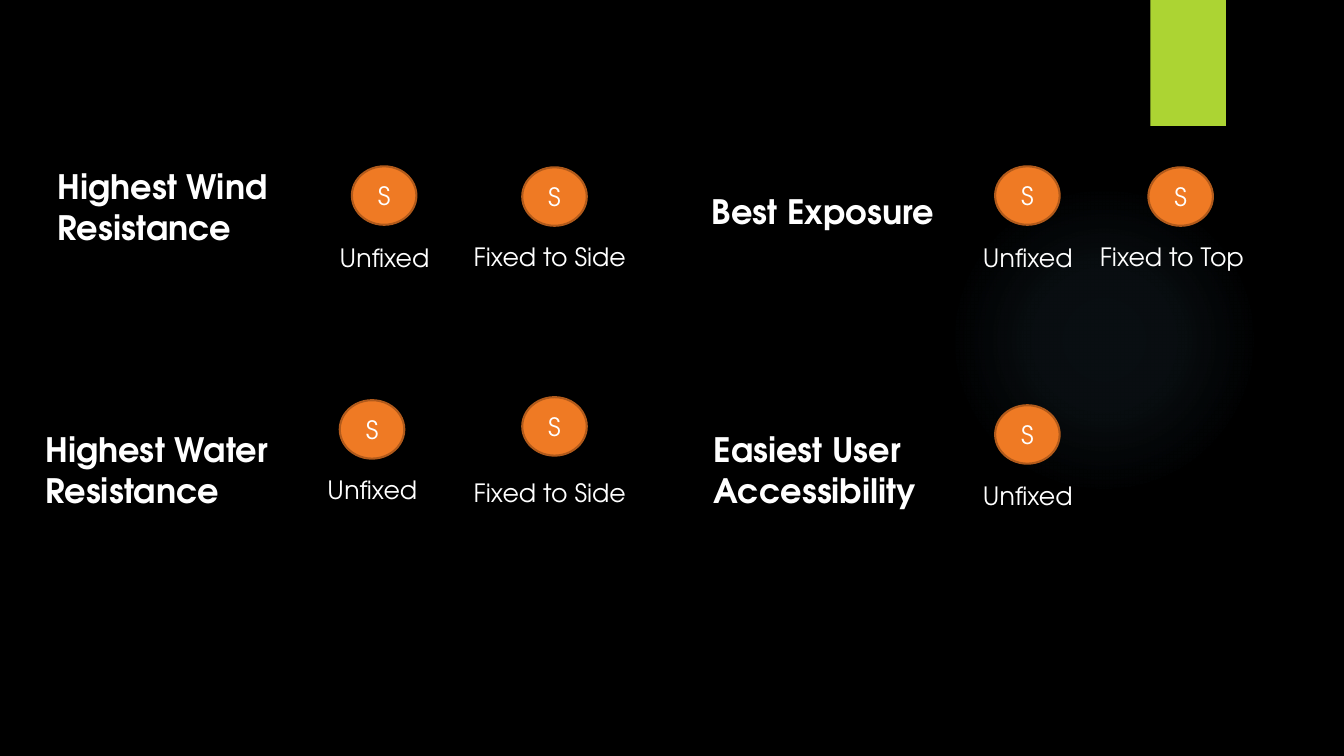
from pptx import Presentation
from pptx.dml.color import RGBColor
from pptx.enum.shapes import MSO_SHAPE as Preset
from pptx.enum.text import MSO_ANCHOR as Anchor, MSO_AUTO_SIZE as AutoSize, PP_ALIGN as Align
from pptx.oxml import parse_xml
from pptx.oxml.ns import nsdecls, qn
from pptx.util import Emu, Pt

PX = 9144
FONT = "TeX Gyre Adventor"
WHITE = "FFFFFF"
HEADING = {"size": Pt(24), "bold": True, "name": FONT}
LABEL = {"size": Pt(18), "name": FONT}
GLOW_STOPS = [(0, 7), (36, 6), (69, 0)]
BADGE_SIZE = (64, 58)
LABEL_SIZE = (217, 40)
LABEL_INDENT = {"Unfixed": -22, "Fixed to Side": -58, "Fixed to Top": -58}

CRITERIA = [
    ("Highest Wind Resistance", (47, 160, 299, 91),
     [("Unfixed", 349, 165, 70), ("Fixed to Side", 518, 166, 68)]),
    ("Best Exposure", (696, 184, 299, 50),
     [("Unfixed", 987, 165, 70), ("Fixed to Top", 1139, 166, 68)]),
    ("Highest Water Resistance", (35, 421, 299, 91),
     [("Unfixed", 337, 397, 69), ("Fixed to Side", 518, 394, 75)]),
    ("Easiest User Accessibility", (698, 421, 299, 91),
     [("Unfixed", 987, 402, 70)]),
]


def px(*lengths):
    """Turn pixel lengths into EMU."""
    return [Emu(length * PX) for length in lengths]


def color(hex_code):
    """Turn a hex string into a colour."""
    return RGBColor.from_string(hex_code)


def write(frame, text, font_format):
    """Write one formatted white paragraph and return it."""
    paragraph = frame.paragraphs[0]
    paragraph.text = text
    for attribute, value in font_format.items():
        setattr(paragraph.font, attribute, value)
    paragraph.font.color.rgb = color(WHITE)
    return paragraph


def add_text(shapes, box, text, font_format):
    """Add a wrapping text box."""
    frame = shapes.add_textbox(*px(*box)).text_frame
    frame.word_wrap = True
    frame.auto_size = AutoSize.SHAPE_TO_FIT_TEXT
    write(frame, text, font_format)


def add_filled(shapes, preset, box, fill):
    """Add a flat shape without an outline."""
    shape = shapes.add_shape(preset, *px(*box))
    shape.shadow.inherit = False
    shape.fill.solid()
    shape.fill.fore_color.rgb = color(fill)
    shape.line.fill.background()
    return shape


def add_glow(shapes, box, tint):
    """Add a circle that fades out from its centre."""
    glow = add_filled(shapes, Preset.OVAL, box, tint)
    stops = "".join(
        f'<a:gs pos="{position * 1000}"><a:srgbClr val="{tint}">'
        f'<a:alpha val="{alpha * 1000}"/></a:srgbClr></a:gs>'
        for position, alpha in GLOW_STOPS)
    gradient = parse_xml(
        f'<a:gradFill {nsdecls("a")} rotWithShape="1"><a:gsLst>{stops}</a:gsLst>'
        '<a:path path="circle"><a:fillToRect l="50000" t="50000" r="50000" b="50000"/>'
        '</a:path></a:gradFill>')
    properties = glow._element.spPr
    properties.replace(properties.find(qn("a:solidFill")), gradient)


def add_option(shapes, name, left, top, label_drop):
    """Add a group of a round badge and the option's label."""
    option = shapes.add_group_shape().shapes
    badge = add_filled(option, Preset.OVAL, (left, top, *BADGE_SIZE), "EF7A24")
    badge.line.color.rgb = color("B15A1B")
    badge.line.width = Pt(1.5)
    badge.text_frame.vertical_anchor = Anchor.MIDDLE
    write(badge.text_frame, "S", LABEL).alignment = Align.CENTER
    label_box = (left + LABEL_INDENT[name], top + label_drop, *LABEL_SIZE)
    add_text(option, label_box, name, LABEL)


def main():
    """Build the slide and save it."""
    deck = Presentation()
    deck.slide_width, deck.slide_height = px(1333, 750)
    slide = deck.slides.add_slide(deck.slide_layouts[6])
    slide.background.fill.solid()
    slide.background.fill.fore_color.rgb = color("000000")
    shapes = slide.shapes
    add_glow(shapes, (941, 183, 308, 308), "7AC4F0")
    add_filled(shapes, Preset.RECTANGLE, (1141, 0, 75, 125), "ACD433")
    for criterion, heading_box, options in CRITERIA:
        add_text(shapes, heading_box, criterion, HEADING)
        for option in options:
            add_option(shapes, *option)
    deck.save("out.pptx")


if __name__ == "__main__":
    main()
